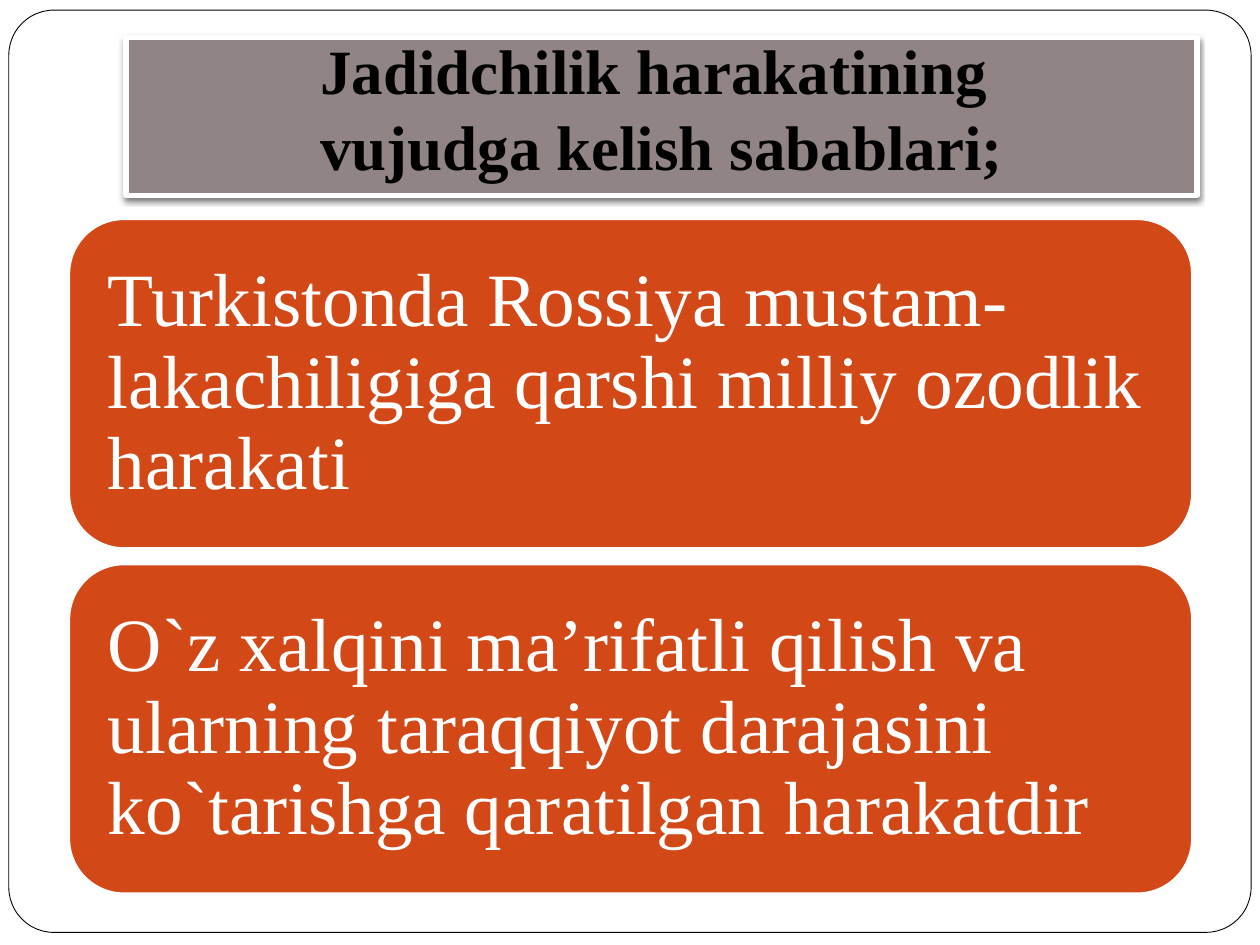
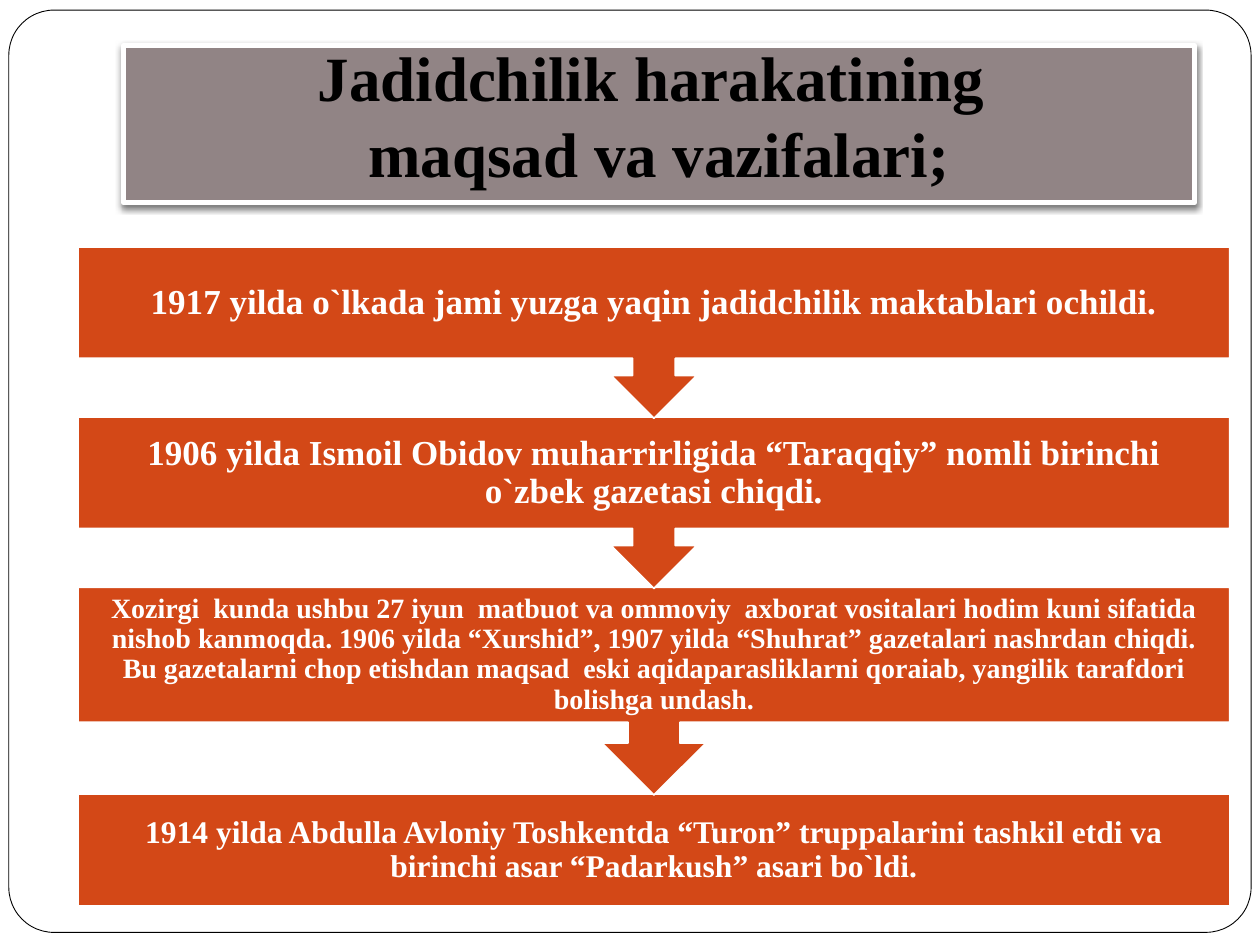
from lxml import etree
from pptx import Presentation
from pptx.dml.color import RGBColor
from pptx.enum.shapes import MSO_SHAPE
from pptx.enum.text import MSO_ANCHOR, MSO_AUTO_SIZE, PP_ALIGN
from pptx.oxml import parse_xml
from pptx.util import Inches, Pt

BLACK = RGBColor(0x00, 0x00, 0x00)
WHITE = RGBColor(0xFF, 0xFF, 0xFF)
TAUPE = RGBColor(0x91, 0x84, 0x85)
ORANGE = RGBColor(0xD3, 0x48, 0x17)
FONT = "Times New Roman"

ROUNDED = MSO_SHAPE.ROUNDED_RECTANGLE
RECTANGLE = MSO_SHAPE.RECTANGLE
CALLOUT = MSO_SHAPE.UP_ARROW_CALLOUT
LEFT, CENTER = PP_ALIGN.LEFT, PP_ALIGN.CENTER
MIDDLE, BOTTOM = MSO_ANCHOR.MIDDLE, MSO_ANCHOR.BOTTOM
NO_AUTOFIT = MSO_AUTO_SIZE.NONE

TITLE_SHADOW = (
    '<a:effectLst xmlns:a="http://schemas.openxmlformats.org/drawingml/2006/main">'
    '<a:outerShdw blurRad="38100" dist="25400" dir="5400000" rotWithShape="0">'
    '<a:srgbClr val="000000"><a:alpha val="50000"/></a:srgbClr>'
    "</a:outerShdw></a:effectLst>"
)

CALLOUT_BODY_SHARE = 0.65
STEP_OVERLAP = 0.01

REASONS = [
    "Turkistonda Rossiya mustam-lakachiligiga qarshi milliy ozodlik harakati",
    "O`z xalqini ma’rifatli qilish va ularning taraqqiyot darajasini "
    "ko`tarishga qaratilgan harakatdir",
]
STEPS = [
    (1.36, 20, 0.16,
     "1917 yilda o`lkada jami yuzga yaqin jadidchilik maktablari ochildi."),
    (1.36, 20, 0.16,
     "1906 yilda Ismoil Obidov muharrirligida “Taraqqiy” nomli birinchi "
     "o`zbek gazetasi chiqdi."),
    (1.65, 16, 0.12,
     "Xozirgi  kunda ushbu 27 iyun  matbuot va ommoviy  axborat vositalari hodim "
     "kuni sifatida nishob kanmoqda. 1906 yilda “Xurshid”, 1907 yilda “Shuhrat” "
     "gazetalari nashrdan chiqdi. Bu gazetalarni chop etishdan maqsad  eski "
     "aqidaparasliklarni qoraiab, yangilik tarafdori bolishga undash."),
    (0.89, 18, 0.14,
     "1914 yilda Abdulla Avloniy Toshkentda “Turon” truppalarini tashkil etdi va "
     "birinchi asar “Padarkush” asari bo`ldi."),
]


def paint(shape, fill, line, width):
    shape.fill.solid()
    shape.fill.fore_color.rgb = fill
    shape.line.color.rgb = line
    shape.line.width = Pt(width)


def add_block(slide, kind, box, fill=ORANGE, line=WHITE, width=1):
    shape = slide.shapes.add_shape(kind, *map(Inches, box))
    shape.shadow.inherit = False
    paint(shape, fill, line, width)
    return shape


def write(shape, text, size, color, bold, align, anchor, insets, spacing=None):
    frame = shape.text_frame
    frame.word_wrap = True
    frame.auto_size = NO_AUTOFIT
    frame.vertical_anchor = anchor
    (frame.margin_left, frame.margin_top,
     frame.margin_right, frame.margin_bottom) = map(Inches, insets)
    frame.text = text
    paragraph = frame.paragraphs[0]
    paragraph.alignment = align
    paragraph.line_spacing = spacing
    paragraph.font.name = FONT
    paragraph.font.size = Pt(size)
    paragraph.font.bold = bold
    paragraph.font.color.rgb = color


def add_titled_slide(presentation, title, left, top):
    slide = presentation.slides.add_slide(presentation.slide_layouts[5])
    border = add_block(slide, ROUNDED, (0.07, 0.08, 9.86, 7.32), WHITE, BLACK, 0.5)
    border.adjustments[0] = 0.049
    slide.shapes.element.insert(2, border.element)

    banner = slide.shapes.title
    banner.left, banner.top = Inches(left), Inches(top)
    banner.width, banner.height = Inches(8.5), Inches(1.25)
    paint(banner, TAUPE, WHITE, 3)
    banner.element.spPr.append(parse_xml(TITLE_SHADOW))
    write(banner, title, 36, BLACK, True, CENTER, BOTTOM, (0.1, 0.05, 0.1, 0.1))
    return slide


def add_reasons(slide, left, top, width, height, gap):
    card_height = (height - gap * (len(REASONS) - 1)) / len(REASONS)
    for index, reason in enumerate(REASONS):
        card_top = top + index * (card_height + gap)
        card = add_block(slide, ROUNDED, (left, card_top, width, card_height))
        write(card, reason, 43, WHITE, False, LEFT, MIDDLE, [0.18] * 4, 0.9)


def add_steps(slide, left, top, width):
    placed = []
    for step in STEPS:
        placed.append((top, *step))
        top += step[0] - STEP_OVERLAP
    last = placed[-1]
    for step in reversed(placed):
        step_top, height, size, inset, text = step
        if step is last:
            holder = add_block(slide, RECTANGLE, (left, step_top, width, height))
        else:
            callout = add_block(slide, CALLOUT, (left, step_top, width, height))
            callout.rotation = 180
            holder = slide.shapes.add_textbox(
                *map(Inches, (left, step_top, width, height * CALLOUT_BODY_SHARE)))
        write(holder, text, size, WHITE, True, CENTER, MIDDLE, [inset] * 4, 0.9)


def main():
    presentation = Presentation()
    presentation.slide_width, presentation.slide_height = Inches(10), Inches(7.5)

    reasons_slide = add_titled_slide(
        presentation, "Jadidchilik harakatining \vvujudga kelish sabablari;", 1, 0.3)
    add_reasons(reasons_slide, 0.55, 1.74, 8.91, 5.35, 0.13)

    goals_slide = add_titled_slide(
        presentation, "Jadidchilik harakatining \vmaqsad va vazifalari;", 0.98, 0.36)
    add_steps(goals_slide, 0.62, 1.96, 9.14)

    presentation.save("out.pptx")


if __name__ == "__main__":
    main()
